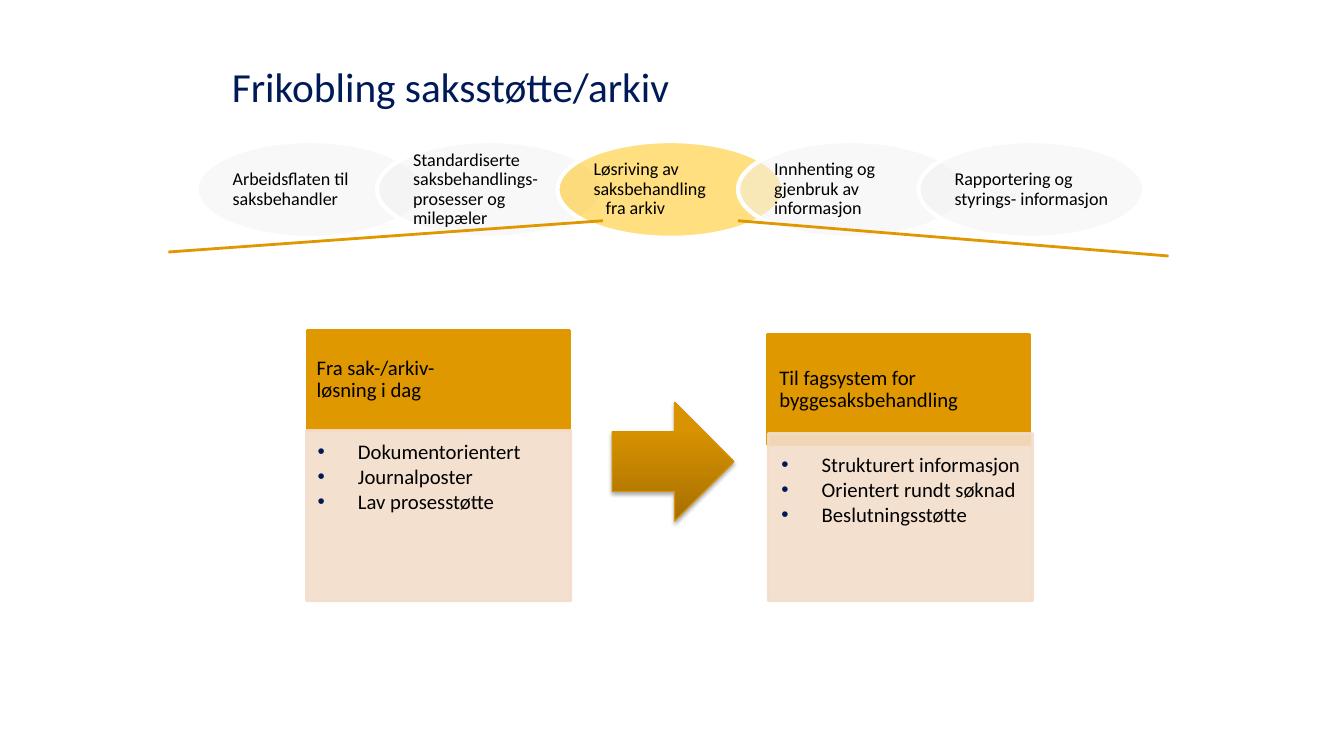
"""Build the slide on decoupling case support from the archive."""
from copy import deepcopy

from lxml import etree
from pptx import Presentation
from pptx import util as u
from pptx.dml.color import RGBColor
from pptx.enum import shapes, text
from pptx.oxml.ns import qn

PX = 9144
COLORS = {
    "navy": "001A58", "black": "000000", "white": "FFFFFF", "grey": "F2F2F2",
    "yellow": "FFC000", "orange": "E09800", "peach": "F3DDCA",
    "arrow_edge": "DB9400", "arrow_dark": "A57000", "arrow_mid": "D99300", "arrow_light": "DA9400",
}
RGB = {name: RGBColor.from_string(value) for name, value in COLORS.items()}


def paint(sp, fill, line, width, alpha, where):
    sp.fill.solid()
    sp.fill.fore_color.rgb = RGB[fill]
    sp.line.color.rgb = RGB[line]
    sp.line.width = u.Pt(width)
    for color in sp._element.xpath(where):
        etree.SubElement(color, qn("a:alpha"), val=str(alpha * 1000))


def write(sp, lines, size, color, insets, anchor, before=0, spacing=0.9):
    tf = sp.text_frame
    tf.word_wrap = True
    tf.auto_size = text.MSO_AUTO_SIZE.NONE
    tf.vertical_anchor = anchor
    tf.margin_left, tf.margin_top, tf.margin_right, tf.margin_bottom = [n * PX for n in insets]
    tf.text = "\n".join(lines)
    for i, p in enumerate(tf.paragraphs):
        p.alignment = text.PP_ALIGN.LEFT
        p.line_spacing = spacing
        p.space_before = u.Pt(before if i else 0)
        p.font.name = "Calibri"
        p.font.size = u.Pt(size)
        p.font.color.rgb = RGB[color]


prs = Presentation()
prs.slide_width, prs.slide_height = 1333 * PX, 750 * PX
s = prs.slides.add_slide(prs.slide_layouts[3])
title, *lists = s.placeholders
MIDDLE, TOP = text.MSO_ANCHOR.MIDDLE, text.MSO_ANCHOR.TOP

title.left, title.top, title.width, title.height = [n * PX for n in (213, 55, 900, 60)]
write(title, ["Frikobling saksstøtte/arkiv"], 29.5, "navy", (17, 5, 10, 5), MIDDLE, spacing=1.0)

steps = [
    ["Arbeidsflaten til saksbehandler"],
    ["Standardiserte saksbehandlings-prosesser og milepæler"],
    ["Løsriving av saksbehandling", "fra arkiv"],
    ["Innhenting og gjenbruk av informasjon"],
    ["Rapportering og styrings- informasjon"],
]
for i, lines in enumerate(steps):
    sp = s.shapes.add_shape(shapes.MSO_SHAPE.OVAL, (195 + 179 * i) * PX, 140 * PX, 224 * PX, 96 * PX)
    sp.shadow.inherit = False
    paint(sp, "yellow" if i == 2 else "grey", "white", 3, 50, "./p:spPr/a:solidFill/a:srgbClr")
    write(sp, lines, 12.9, "black", (3, 0, 3, 0), MIDDLE)
    for p in sp.text_frame.paragraphs[1:]:
        p._p.get_or_add_pPr().set("marL", str(12 * PX))

for ends in [(598, 219, 167, 250), (732, 219, 1159, 254)]:
    line = s.shapes.add_connector(shapes.MSO_CONNECTOR.STRAIGHT, *[n * PX for n in ends])
    line.line.color.rgb = RGB["orange"]
    line.line.width = u.Pt(2)
    etree.SubElement(line._element.spPr, qn("a:effectLst"))

cards = [
    ("Fra sak-/arkiv-\vløsning i dag", (305, 328, 260, 98), 9, (304, 427, 262, 169), (11, 11),
     ["Dokumentorientert", "Journalposter", "Lav prosesstøtte"]),
    ("Til fagsystem for byggesaksbehandling", (761, 332, 260, 109), 12, (762, 430, 262, 166), (13, 21),
     ["Strukturert informasjon", "Orientert rundt søknad", "Beslutningsstøtte"]),
]
for body, (heading, head_box, head_inset, body_box, (inset_x, inset_y), items) in zip(lists, cards):
    head = s.shapes.add_shape(shapes.MSO_SHAPE.RECTANGLE, *[n * PX for n in head_box])
    head.shadow.inherit = False
    paint(head, "orange", "orange", 2, 100, "./p:spPr//a:srgbClr")
    write(head, [heading], 14.8, "black", (head_inset, 8, 8, 8), MIDDLE)

    s.shapes._spTree.append(body._element)
    body.left, body.top, body.width, body.height = [n * PX for n in body_box]
    paint(body, "peach", "peach", 2, 90, "./p:spPr//a:srgbClr")
    body.text_frame.text = "\n".join(items)
    write(body, items, 14.8, "black", (inset_x, inset_y, 9, 11), TOP, before=1.9)
    for p in body.text_frame.paragraphs:
        pPr = p._p.get_or_add_pPr()
        pPr.set("marL", str(40 * PX))
        pPr.set("indent", str(-40 * PX))
        bullet_color = etree.Element(qn("a:buClr"))
        etree.SubElement(bullet_color, qn("a:srgbClr"), val=COLORS["navy"])
        bullet_font = etree.Element(qn("a:buFont"), typeface="Arial")
        bullet = etree.Element(qn("a:buChar"), char="•")
        for element in (bullet_color, bullet_font, bullet):
            pPr.find(qn("a:defRPr")).addprevious(element)

arrow = s.shapes.add_shape(shapes.MSO_SHAPE.RIGHT_ARROW, 607 * PX, 399 * PX, 121 * PX, 118 * PX)
arrow.line.color.rgb = RGB["arrow_edge"]
arrow.line.width = u.Pt(0.75)
arrow.fill.gradient()
arrow.fill.gradient_angle = 90
last_stop = arrow._element.xpath("./p:spPr/a:gradFill/a:gsLst/a:gs")[-1]
last_stop.addnext(deepcopy(last_stop))
stops = [(0, "arrow_dark"), (0.8, "arrow_mid"), (1, "arrow_light")]
for stop, (position, color) in zip(arrow.fill.gradient_stops, stops):
    stop.position = position
    stop.color.rgb = RGB[color]
arrow.shadow.inherit = False
effects = arrow._element.spPr.find(qn("a:effectLst"))
shadow = etree.SubElement(effects, qn("a:outerShdw"), blurRad=str(u.Pt(3)), dist=str(u.Pt(1.8)),
                          dir="5400000", rotWithShape="0")
shadow_color = etree.SubElement(shadow, qn("a:srgbClr"), val=COLORS["black"])
etree.SubElement(shadow_color, qn("a:alpha"), val="35000")

prs.save("out.pptx")
